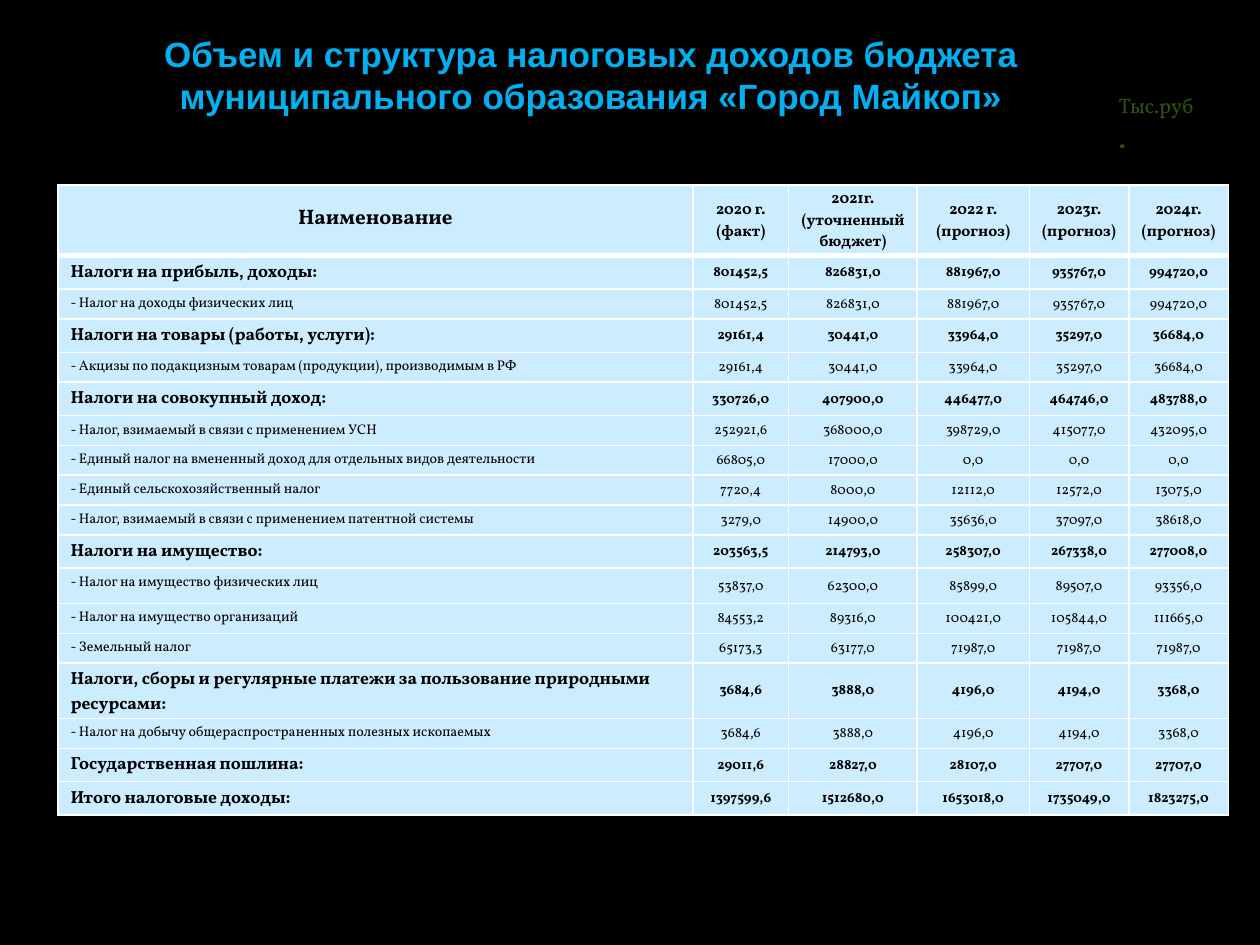
from dataclasses import dataclass

from lxml.etree import SubElement
from pptx import Presentation
from pptx.dml.color import RGBColor
from pptx.enum.text import MSO_ANCHOR, PP_ALIGN
from pptx.oxml.ns import qn
from pptx.util import Inches, Pt


@dataclass(frozen=True)
class Theme:
    back: str = "000000"
    title: str = "00B0F0"
    unit: str = "31520A"
    ink: str = "000000"
    cell: str = "CCECFF"
    rule: str = "FFFFFF"
    head: str = "Arial"
    body: str = "Vollkorn"
    big: int = 20
    dot: int = 18
    name: int = 12
    group: int = 10
    year: int = 9
    small: int = 8
    thin: int = 1
    thick: int = 3


T = Theme()
WIDE, HIGH = 10, 7.5
COLS = [5.04, 0.76, 1.02, 0.89, 0.79, 0.79]
TALL = {0: 0.56, 11: 0.28, 14: 0.44}
GROUP, ITEM = 0.265, 0.237
HEADS = [
    "Наименование", "2020 г.|(факт)", "2021г.|(уточненный|бюджет)",
    "2022 г.|(прогноз)", "2023г.|(прогноз)", "2024г.|(прогноз)",
]
# Labels that start with a dash are items; the others are bold groups.
ROWS = [
    ("Налоги на прибыль, доходы:",
     "801452,5 826831,0 881967,0 935767,0 994720,0"),
    ("- Налог на доходы физических лиц",
     "801452,5 826831,0 881967,0 935767,0 994720,0"),
    ("Налоги на товары (работы, услуги):",
     "29161,4 30441,0 33964,0 35297,0 36684,0"),
    ("- Акцизы по подакцизным товарам (продукции), производимым в РФ",
     "29161,4 30441,0 33964,0 35297,0 36684,0"),
    ("Налоги на совокупный доход:",
     "330726,0 407900,0 446477,0 464746,0 483788,0"),
    ("- Налог, взимаемый в связи с применением УСН",
     "252921,6 368000,0 398729,0 415077,0 432095,0"),
    ("- Единый налог на вмененный доход для отдельных видов деятельности",
     "66805,0 17000,0 0,0 0,0 0,0"),
    ("- Единый сельскохозяйственный налог",
     "7720,4 8000,0 12112,0 12572,0 13075,0"),
    ("- Налог, взимаемый в связи с применением патентной системы",
     "3279,0 14900,0 35636,0 37097,0 38618,0"),
    ("Налоги на имущество:",
     "203563,5 214793,0 258307,0 267338,0 277008,0"),
    ("- Налог на имущество физических лиц",
     "53837,0 62300,0 85899,0 89507,0 93356,0"),
    ("- Налог на имущество организаций",
     "84553,2 89316,0 100421,0 105844,0 111665,0"),
    ("- Земельный налог",
     "65173,3 63177,0 71987,0 71987,0 71987,0"),
    ("Налоги, сборы и регулярные платежи за пользование природными ресурсами:",
     "3684,6 3888,0 4196,0 4194,0 3368,0"),
    ("- Налог на добычу общераспространенных полезных ископаемых",
     "3684,6 3888,0 4196,0 4194,0 3368,0"),
    ("Государственная пошлина:",
     "29011,6 28827,0 28107,0 27707,0 27707,0"),
    ("Итого налоговые доходы:",
     "1397599,6 1512680,0 1653018,0 1735049,0 1823275,0"),
]


def add_run(para, text, size, color, font=T.body, bold=False):
    run = para.add_run()
    run.text = text
    run.font.size = Pt(size)
    run.font.name = font
    run.font.bold = bold
    run.font.color.rgb = RGBColor.from_string(color)


def add_box(slide, left, top, wide, high):
    """Add a text box placed by shares of the slide; return its paragraph."""
    box = slide.shapes.add_textbox(
        Inches(left * WIDE), Inches(top * HIGH),
        Inches(wide * WIDE), Inches(high * HIGH))
    box.text_frame.word_wrap = True
    return box.text_frame.paragraphs[0]


def add_edges(cell, row):
    """Rule all four sides, with a thick line under the header."""
    props = cell._tc.get_or_add_tcPr()
    for side in "LRTB":
        heavy = (row, side) in ((0, "B"), (1, "T"))
        line = SubElement(props, qn(f"a:ln{side}"),
                          w=str(Pt(T.thick if heavy else T.thin)))
        fill = SubElement(line, qn("a:solidFill"))
        SubElement(fill, qn("a:srgbClr"), val=T.rule)


def fill_cell(cell, text, row, col, size, bold):
    add_edges(cell, row)
    cell.fill.solid()
    cell.fill.fore_color.rgb = RGBColor.from_string(T.cell)
    side = 0.1 if col == 0 else 0.05 if col < 3 else 0.01
    cell.margin_left = cell.margin_right = Inches(side)
    cell.margin_top = Inches(0.04 if col == 0 else 0.01)
    cell.margin_bottom = 0
    cell.vertical_anchor = MSO_ANCHOR.MIDDLE if col else MSO_ANCHOR.TOP
    frame = cell.text_frame
    for num, part in enumerate(text.split("|")):
        para = frame.add_paragraph() if num else frame.paragraphs[0]
        para.alignment = PP_ALIGN.LEFT if row and not col else PP_ALIGN.CENTER
        if row == col == 0:
            para.line_spacing = 1.5
        add_run(para, part, size, T.ink, bold=bold)


def add_grid(slide):
    data = [HEADS] + [[label, *nums.split()] for label, nums in ROWS]
    highs = [TALL.get(num, ITEM if line[0].startswith("-") else GROUP)
             for num, line in enumerate(data)]
    grid = slide.shapes.add_table(
        len(data), len(COLS), Inches(0.46), Inches(1.47),
        Inches(sum(COLS)), Inches(sum(highs))).table
    grid.horz_banding = False
    for col, wide in enumerate(COLS):
        grid.columns[col].width = Inches(wide)
    for row, line in enumerate(data):
        grid.rows[row].height = Inches(highs[row])
        bold = not line[0].startswith("-")
        first, rest = ((T.name, T.year) if row == 0 else
                       (T.group if bold else T.small, T.small))
        for col, text in enumerate(line):
            fill_cell(grid.cell(row, col), text, row, col,
                      rest if col else first, bold)


def main():
    deck = Presentation()
    deck.slide_width, deck.slide_height = Inches(WIDE), Inches(HIGH)
    slide = deck.slides.add_slide(deck.slide_layouts[6])
    slide.background.fill.solid()
    slide.background.fill.fore_color.rgb = RGBColor.from_string(T.back)

    title = add_box(slide, 0.091, 0.028, 0.756, 0.103)
    title.alignment = PP_ALIGN.CENTER
    add_run(title, "Объем и структура налоговых доходов бюджета "
            "муниципального образования «Город Майкоп»",
            T.big, T.title, T.head, True)
    add_grid(slide)
    unit = add_box(slide, 0.878, 0.091, 0.084, 0.053)
    add_run(unit, "Тыс.руб", T.name, T.unit)
    add_run(unit, ".", T.dot, T.unit)
    deck.save("out.pptx")


if __name__ == "__main__":
    main()
